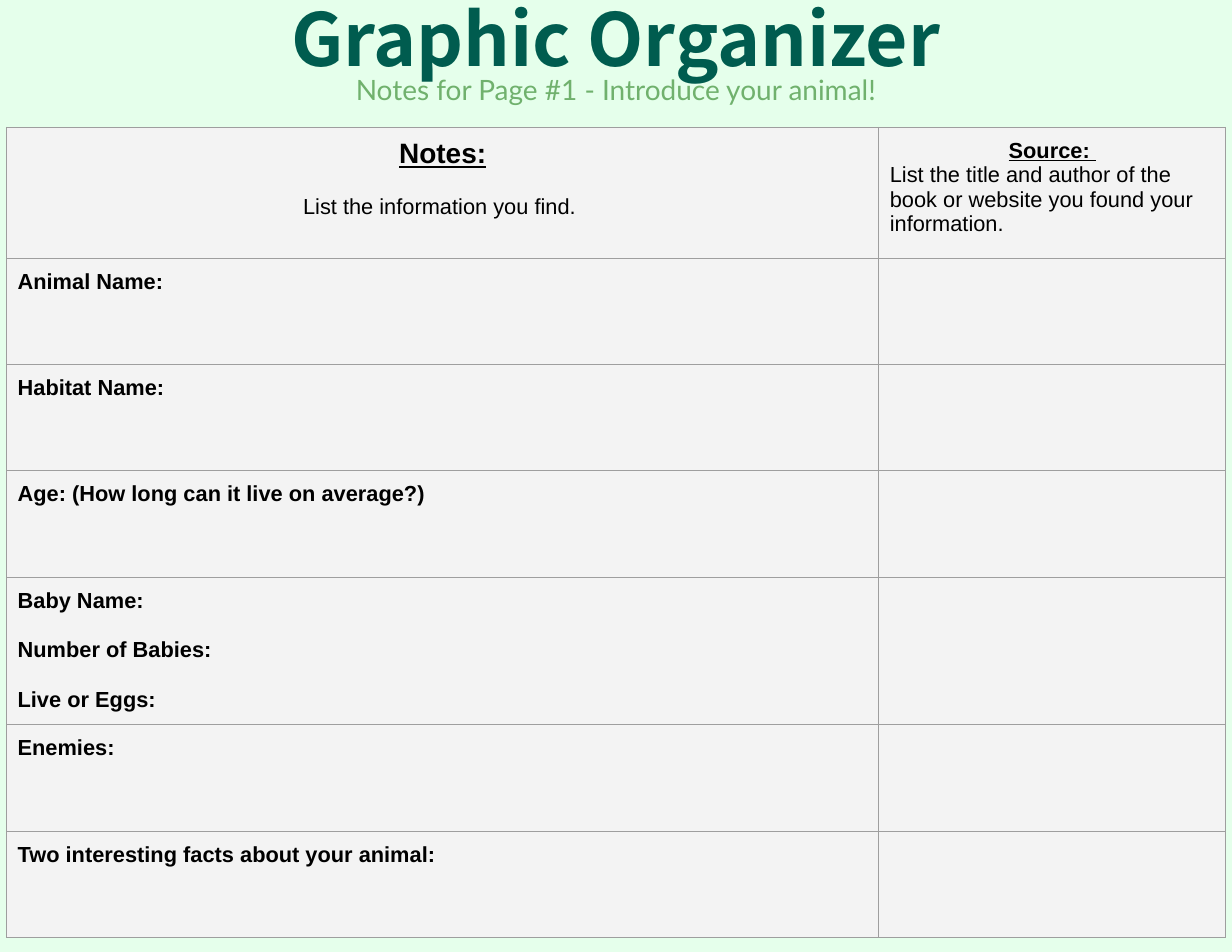
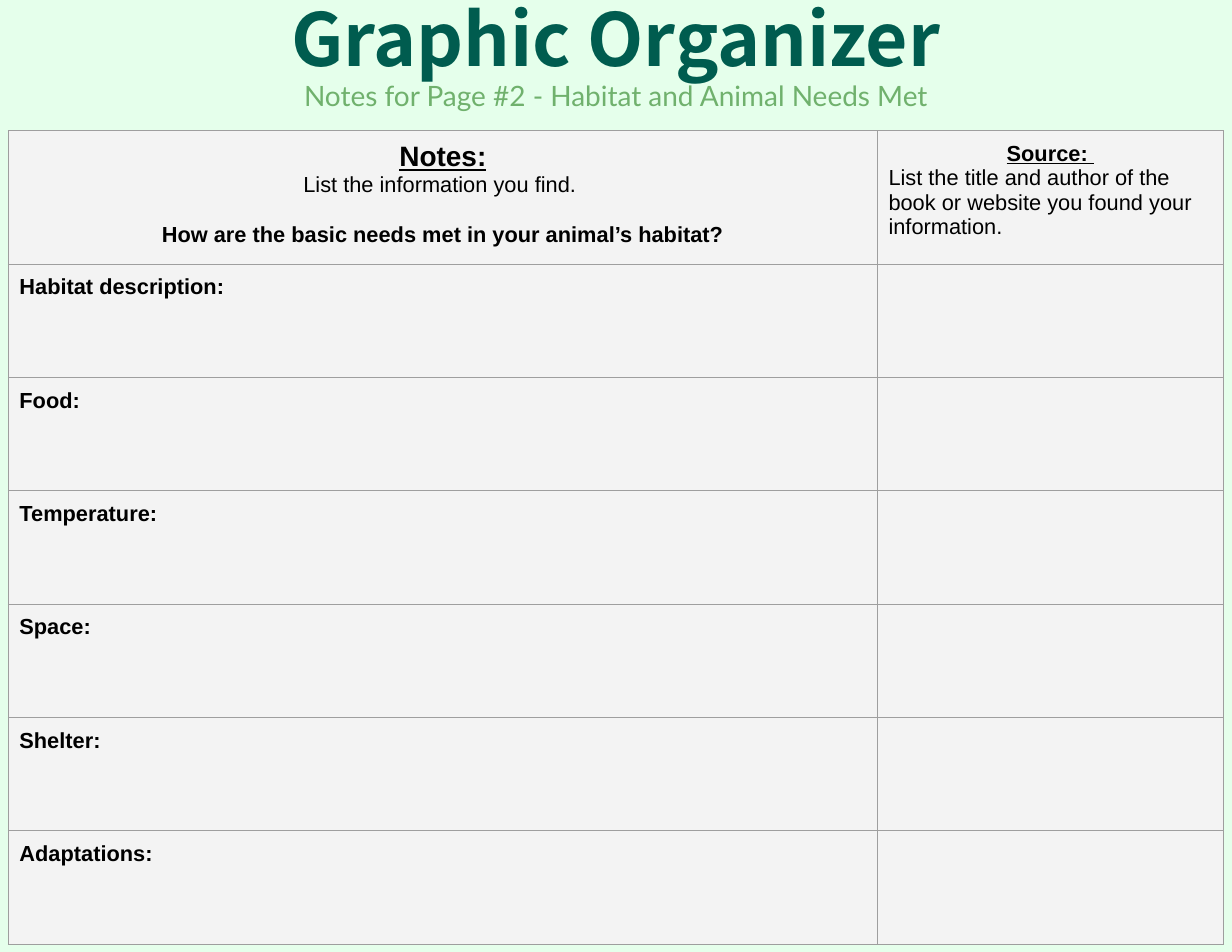
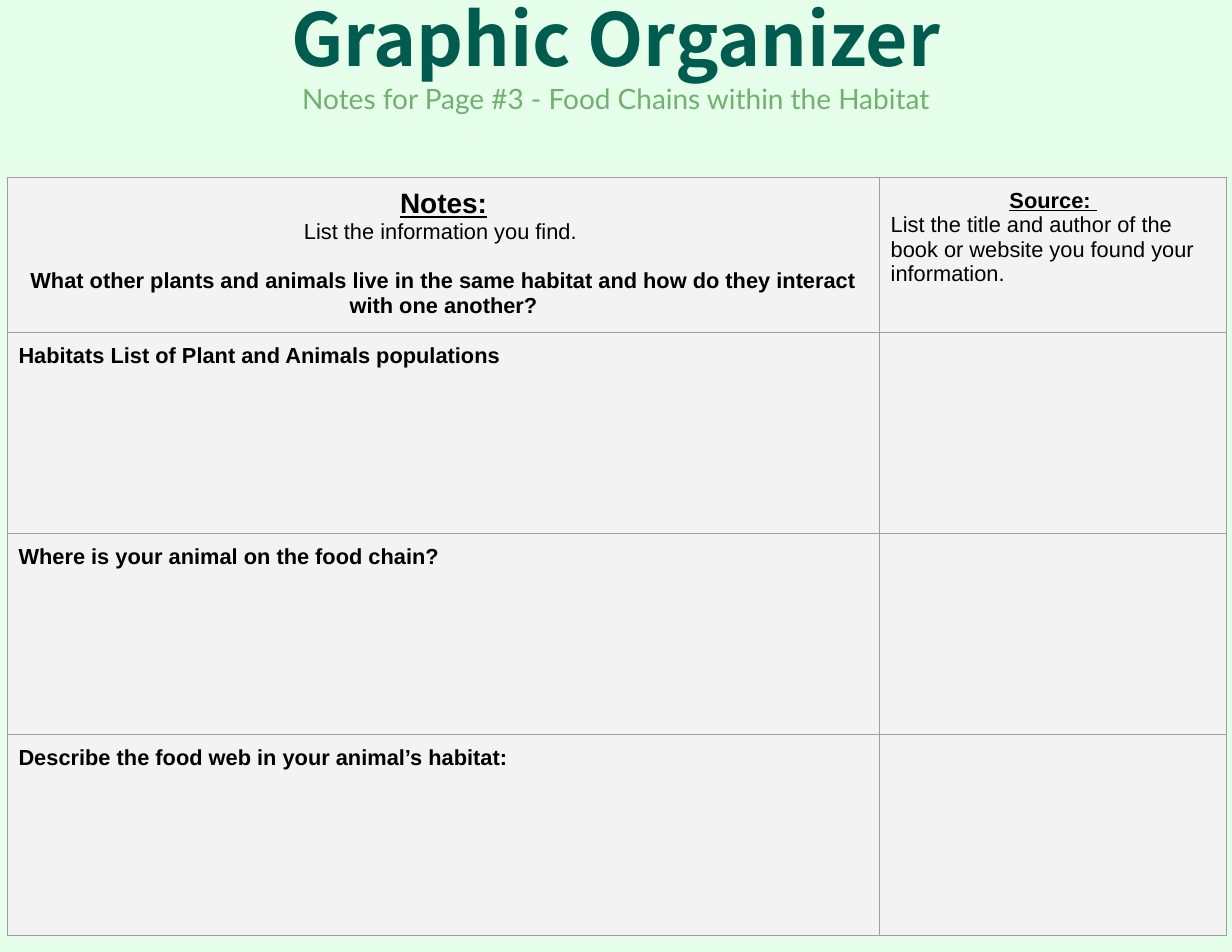
from lxml import etree
from pptx import Presentation
from pptx import util as u
from pptx.dml.color import RGBColor
from pptx.enum import text as t
from pptx.oxml import ns

# Shared colours, fonts and measures
MINT = RGBColor(0xE5, 0xFF, 0xEB)
DARK_GREEN = RGBColor(0x00, 0x5C, 0x4F)
LEAF_GREEN = RGBColor(0x70, 0xB1, 0x6D)
BLACK = RGBColor(0x00, 0x00, 0x00)
CELL_GREY = RGBColor(0xF3, 0xF3, 0xF3)
BORDER_GREY = RGBColor(0x9E, 0x9E, 0x9E)
TITLE_FONT, SUBTITLE_FONT, TABLE_FONT = "Noto Sans CJK KR", "Lato", "Arial"
HEADING_LEFT, HEADING_WIDTH = u.Cm(0.95), u.Cm(26.04)
LINE_GAP = 16.1  # one line of table text, in points
CENTER = t.PP_ALIGN.CENTER

# Each page: vertical places and table sizes in cm; a tuple of labels shares a row
PAGES = [
    dict(subtitle="Notes for Page #1 - Introduce your animal!", subtitle_top=1.35,
         table_at=(0.15, 2.89), columns=(19.78, 7.87),
         header_height=2.97, row_height=2.41, tall_row_height=3.35,
         question=None,
         rows=["Animal Name:", "Habitat Name:",
               "Age: (How long can it live on average?)",
               ("Baby Name:", "Number of Babies:", "Live or Eggs:"),
               "Enemies:", "Two interesting facts about your animal:"]),
    dict(subtitle="Notes for Page #2 - Habitat and Animal Needs Met", subtitle_top=1.47,
         table_at=(0.19, 2.96), columns=(19.71, 7.84),
         header_height=3.03, row_height=2.57,
         question="How are the basic needs met in your animal’s habitat?",
         rows=["Habitat description:", "Food:", "Temperature:", "Space:",
               "Shelter:", "Adaptations:"]),
    dict(subtitle="Notes for Page #3 - Food Chains within the Habitat", subtitle_top=1.55,
         table_at=(0.17, 4.02), columns=(19.78, 7.87),
         header_height=3.52, row_height=4.56,
         question="What other plants and animals live in the same habitat "
                  "and how do they interact with one another?",
         rows=["Habitats List of Plant and Animals populations",
               "Where is your animal on the food chain?",
               "Describe the food web in your animal’s habitat:"]),
]


def write_text(frame, text, size=14, font=TABLE_FONT, color=BLACK, bold=False,
               underline=False, align=t.PP_ALIGN.LEFT, gap=0):
    """Fill the first paragraph, or add one when the frame already has text."""
    paragraph = frame.add_paragraph() if frame.text else frame.paragraphs[0]
    paragraph.alignment = align
    paragraph.space_before = u.Pt(gap)
    run = paragraph.add_run()
    run.text = text
    run.font.size = u.Pt(size)
    run.font.name = font
    run.font.bold = bold
    run.font.underline = underline
    run.font.color.rgb = color


def set_frame(frame, anchor):
    frame.word_wrap = True
    frame.auto_size = t.MSO_AUTO_SIZE.NONE
    frame.vertical_anchor = anchor
    frame.margin_left = frame.margin_right = u.Cm(0.3)
    frame.margin_top = frame.margin_bottom = u.Cm(0.3)


def add_heading(slide, subtitle, subtitle_top):
    title = slide.shapes.title
    title.left, title.top = HEADING_LEFT, u.Cm(-0.69)
    title.width, title.height = HEADING_WIDTH, u.Cm(2.84)
    set_frame(title.text_frame, t.MSO_ANCHOR.BOTTOM)
    write_text(title.text_frame, "Graphic Organizer", size=47, font=TITLE_FONT,
               color=DARK_GREEN, bold=True, align=CENTER)

    box = slide.shapes.add_textbox(HEADING_LEFT, u.Cm(subtitle_top),
                                   HEADING_WIDTH, u.Cm(1.75))
    set_frame(box.text_frame, t.MSO_ANCHOR.TOP)
    write_text(box.text_frame, subtitle, size=18, font=SUBTITLE_FONT,
               color=LEAF_GREEN, align=CENTER)


def format_cell(cell):
    # Borders come before the fill in the cell properties
    properties = cell._tc.get_or_add_tcPr()
    for side in ("lnL", "lnR", "lnT", "lnB"):
        line = etree.SubElement(properties, ns.qn(f"a:{side}"), w=str(u.Pt(0.75)))
        fill = etree.SubElement(line, ns.qn("a:solidFill"))
        etree.SubElement(fill, ns.qn("a:srgbClr"), val=str(BORDER_GREY))
    cell.fill.solid()
    cell.fill.fore_color.rgb = CELL_GREY
    cell.margin_left = cell.margin_right = u.Cm(0.25)
    cell.margin_top = cell.margin_bottom = u.Cm(0.25)


def write_header(notes, source, question):
    write_text(notes, "Notes:", size=18, bold=True, underline=True, align=CENTER)
    write_text(notes, "List the information you find. ", align=CENTER,
               gap=0 if question else LINE_GAP)
    if question:
        write_text(notes, question, bold=True, align=CENTER, gap=LINE_GAP)
    write_text(source, "Source: ", bold=True, underline=True, align=CENTER)
    write_text(source, "List the title and author of the book or website "
                       "you found your information.")


def add_notes_table(slide, page):
    labels = [(row,) if isinstance(row, str) else row for row in page["rows"]]
    heights = [page["header_height"]] + [
        page["row_height"] if len(row) == 1 else page["tall_row_height"] for row in labels]
    left, top = page["table_at"]
    table = slide.shapes.add_table(
        len(heights), len(page["columns"]), u.Cm(left), u.Cm(top),
        u.Cm(sum(page["columns"])), u.Cm(sum(heights))).table
    table.first_row = table.horz_banding = False
    for column, width in zip(table.columns, page["columns"]):
        column.width = u.Cm(width)
    for row, height in zip(table.rows, heights):
        row.height = u.Cm(height)
    for cell in table.iter_cells():
        format_cell(cell)

    write_header(table.cell(0, 0).text_frame, table.cell(0, 1).text_frame,
                 page["question"])
    for number, row in enumerate(labels, start=1):
        for position, label in enumerate(row):
            write_text(table.cell(number, 0).text_frame, label, bold=True,
                       gap=LINE_GAP if position else 0)


def main():
    presentation = Presentation()
    presentation.slide_width, presentation.slide_height = u.Cm(27.94), u.Cm(21.59)
    background = presentation.slide_master.background.fill
    background.solid()
    background.fore_color.rgb = MINT
    title_only = presentation.slide_layouts[5]
    for page in PAGES:
        slide = presentation.slides.add_slide(title_only)
        add_heading(slide, page["subtitle"], page["subtitle_top"])
        add_notes_table(slide, page)
    presentation.save("out.pptx")


if __name__ == "__main__":
    main()
